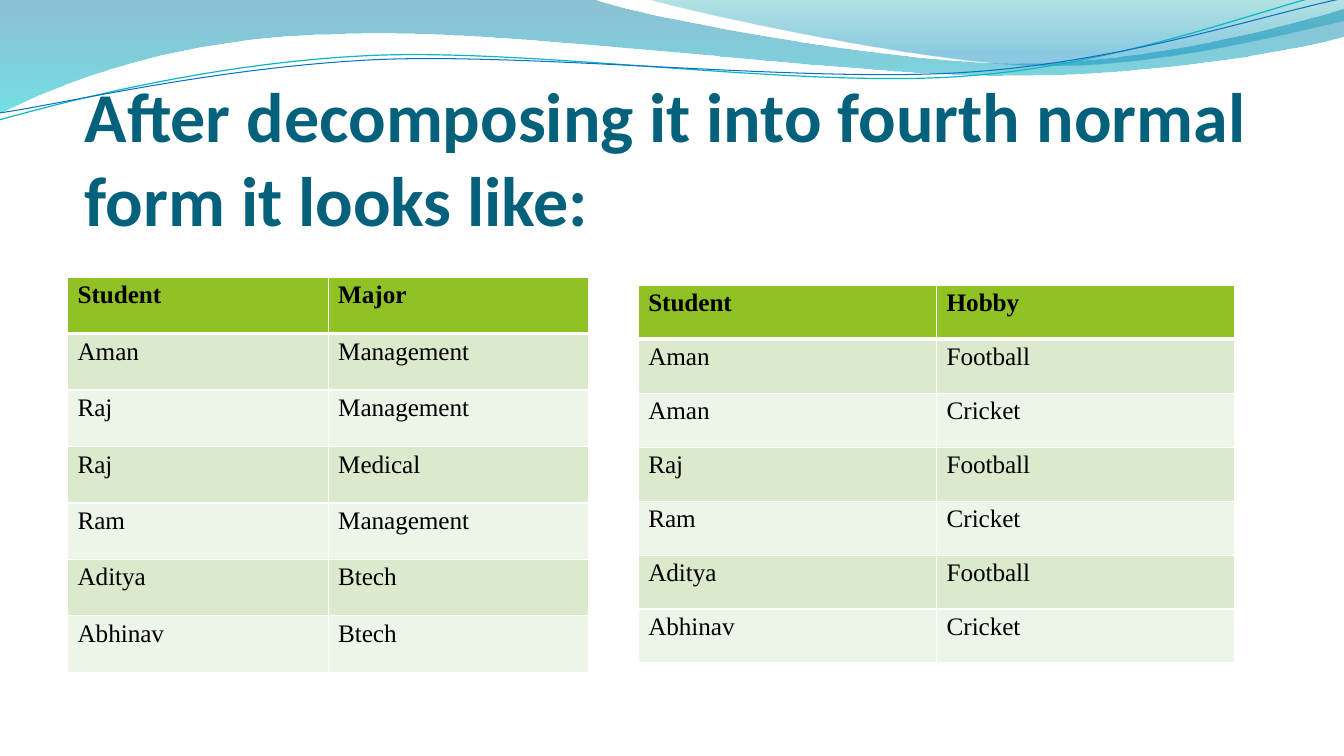
"""Build the fourth normal form slide: wave header, title and two tables."""
import pptx
import pptx.dml.color
import pptx.enum.text
import pptx.oxml
import pptx.oxml.ns
import pptx.util

Inches, Pt = pptx.util.Inches, pptx.util.Pt
RGBColor = pptx.dml.color.RGBColor
qn = pptx.oxml.ns.qn
NS = pptx.oxml.ns.nsdecls("a")

WHITE = RGBColor(0xFF, 0xFF, 0xFF)
BLACK = RGBColor(0, 0, 0)
TITLE_BLUE = RGBColor(0x04, 0x61, 0x7B)
HEADER_GREEN = RGBColor(0x90, 0xC2, 0x25)
BAND_DARK = RGBColor(0xDB, 0xE9, 0xCD)
BAND_LIGHT = RGBColor(0xED, 0xF4, 0xE8)
WAVE_BLUE, WAVE_CYAN = RGBColor(0x00, 0x74, 0xA1), RGBColor(0x00, 0xC6, 0xCF)
CREST_TEAL, CREST_BLUE = RGBColor(0x00, 0xA1, 0xA9), RGBColor(0x00, 0x8B, 0xBF)
LINE_TEAL, LINE_BLUE = RGBColor(0x0A, 0xB8, 0xBF), RGBColor(0x0F, 0x6F, 0xC6)

TIGHT = -5
TITLE_RUNS = [
    ("After ", 0), ("decomposing it into ", TIGHT), ("fourth ", 0), ("normal ", TIGHT),
    ("form ", 0), ("it ", TIGHT), ("looks like:", 0),
]
TABLES = [
    ((0.67, 2.75, 5.17, 3.92), [
        ("Student", "Major"), ("Aman", "Management"), ("Raj", "Management"),
        ("Raj", "Medical"), ("Ram", "Management"), ("Aditya", "Btech"),
        ("Abhinav", "Btech")]),
    ((6.33, 2.83, 5.92, 3.75), [
        ("Student", "Hobby"), ("Aman", "Football"), ("Aman", "Cricket"),
        ("Raj", "Football"), ("Ram", "Cricket"), ("Aditya", "Football"),
        ("Abhinav", "Cricket")]),
]
WAVES = [
    ([(0, 0), (5.87, -0.01), (6.34, 0.17, 8.85, 0.63, 10.11, 0.63),
      (11.38, 0.63, 12.78, 0.26, 13.33, 0.09), (13.35, 0.36),
      (13.11, 0.44, 11.6, 0.76, 9.94, 0.75), (8.29, 0.75, 5.09, 0.28, 3.43, 0.34),
      (1.72, 0.36, 0.61, 0.83, -0.01, 1.13)],
     [(0, WAVE_BLUE, 45), (1, WAVE_CYAN, 55)]),
    ([(6.39, -0.01), (6.79, 0.11, 9.09, 0.62, 10.25, 0.65),
      (11.41, 0.69, 12.82, 0.32, 13.33, 0.21), (13.33, 0)],
     [(0, CREST_TEAL, 30), (0.8, CREST_BLUE, 45)]),
]
STROKES = [
    ([(-0.01, 1.19), (0.64, 1.01, 2.11, 0.62, 3.69, 0.55),
      (5.27, 0.48, 7.9, 0.87, 9.5, 0.76), (11.1, 0.66, 12.52, 0.08, 13.31, -0.1)],
     LINE_TEAL, 0.85),
    ([(0, 1.12), (0.63, 1.03, 2.18, 0.66, 3.78, 0.59),
      (5.37, 0.53, 7.96, 0.82, 9.55, 0.72), (11.15, 0.62, 12.55, 0.14, 13.34, -0.02)],
     LINE_BLUE, 0.75),
]


def add_outline(slide, segments, close):
    ends = [(Inches(seg[-2]), Inches(seg[-1])) for seg in segments]
    builder = slide.shapes.build_freeform(*ends[0])
    builder.add_line_segments(ends[1:], close=close)
    sp = builder.convert_to_shape()
    sp.shadow.inherit = False
    steps = list(sp._element.iter(qn("a:lnTo")))
    for step, seg in zip(steps, segments[1:]):
        if len(seg) == 6:
            pts = "".join(f'<a:pt x="{Inches(x) - sp.left}" y="{Inches(y) - sp.top}"/>'
                          for x, y in zip(seg[::2], seg[1::2]))
            curve = pptx.oxml.parse_xml(f"<a:cubicBezTo {NS}>{pts}</a:cubicBezTo>")
            step.getparent().replace(step, curve)
    return sp


def add_wave(slide, segments, stops):
    sp = add_outline(slide, segments, True)
    sp.line.fill.background()
    sp.fill.gradient()
    sp.fill.gradient_angle = 270
    for stop, (position, color, _) in zip(sp.fill.gradient_stops, stops):
        stop.position = position
        stop.color.rgb = color
    colors = sp._element.spPr.find(qn("a:gradFill")).iter(qn("a:srgbClr"))
    for clr, (_, _, opacity) in zip(colors, stops):
        clr.append(pptx.oxml.parse_xml(f'<a:alpha {NS} val="{opacity * 1000}"/>'))


def add_stroke(slide, segments, color, width):
    sp = add_outline(slide, segments, False)
    sp.fill.background()
    sp.line.color.rgb = color
    sp.line.width = Pt(width)


def add_run(p, text, font, size, color, bold, spacing):
    r = p.add_run()
    r.text = text
    r.font.name, r.font.size, r.font.bold = font, Pt(size), bold
    r.font.color.rgb = color
    r._r.get_or_add_rPr().set("spc", str(spacing))


def add_title(slide):
    tf = slide.shapes.add_textbox(
        Inches(0.83), Inches(0.69), Inches(11.92), Inches(1.7)).text_frame
    tf.word_wrap = True
    tf.vertical_anchor = pptx.enum.text.MSO_ANCHOR.BOTTOM
    tf.margin_left, tf.margin_top = Inches(0.01), Inches(0.01)
    tf.margin_right = tf.margin_bottom = 0
    p = tf.paragraphs[0]
    p.space_before = Pt(1)
    for text, spacing in TITLE_RUNS:
        add_run(p, text, "Calibri", 50, TITLE_BLUE, True, spacing)


def set_borders(cell, widths):
    for side, width in widths.items():
        cell._tc.get_or_add_tcPr().append(pptx.oxml.parse_xml(
            f'<a:ln{side} {NS} w="{Pt(width)}"><a:solidFill>'
            f'<a:srgbClr val="{WHITE}"/></a:solidFill></a:ln{side}>'))


def fill_cell(cell, text, row):
    header = row == 0
    set_borders(cell, {"L": 1, "R": 1, "T": 3 if row == 1 else 1, "B": 3 if header else 1})
    cell.fill.solid()
    cell.fill.fore_color.rgb = HEADER_GREEN if header else BAND_DARK if row % 2 else BAND_LIGHT
    cell.margin_left = cell.margin_right = cell.margin_bottom = 0
    cell.margin_top = Inches(0.04)
    p = cell.text_frame.paragraphs[0]
    p._p.get_or_add_pPr().set("marL", str(Inches(0.1)))
    p.space_before = Pt(3.1)
    add_run(p, text, "Times New Roman", 18, BLACK, header, TIGHT)


def add_data_table(slide, box, rows):
    left, top, width, height = map(Inches, box)
    table = slide.shapes.add_table(len(rows), 2, left, top, width, height).table
    for i, texts in enumerate(rows):
        for j, text in enumerate(texts):
            fill_cell(table.cell(i, j), text, i)


def main():
    prs = pptx.Presentation()
    prs.slide_width, prs.slide_height = Inches(13.33), Inches(7.5)
    slide = prs.slides.add_slide(prs.slide_layouts[6])
    for wave in WAVES:
        add_wave(slide, *wave)
    for stroke in STROKES:
        add_stroke(slide, *stroke)
    add_title(slide)
    for box, rows in TABLES:
        add_data_table(slide, box, rows)
    prs.save("out.pptx")


if __name__ == "__main__":
    main()
